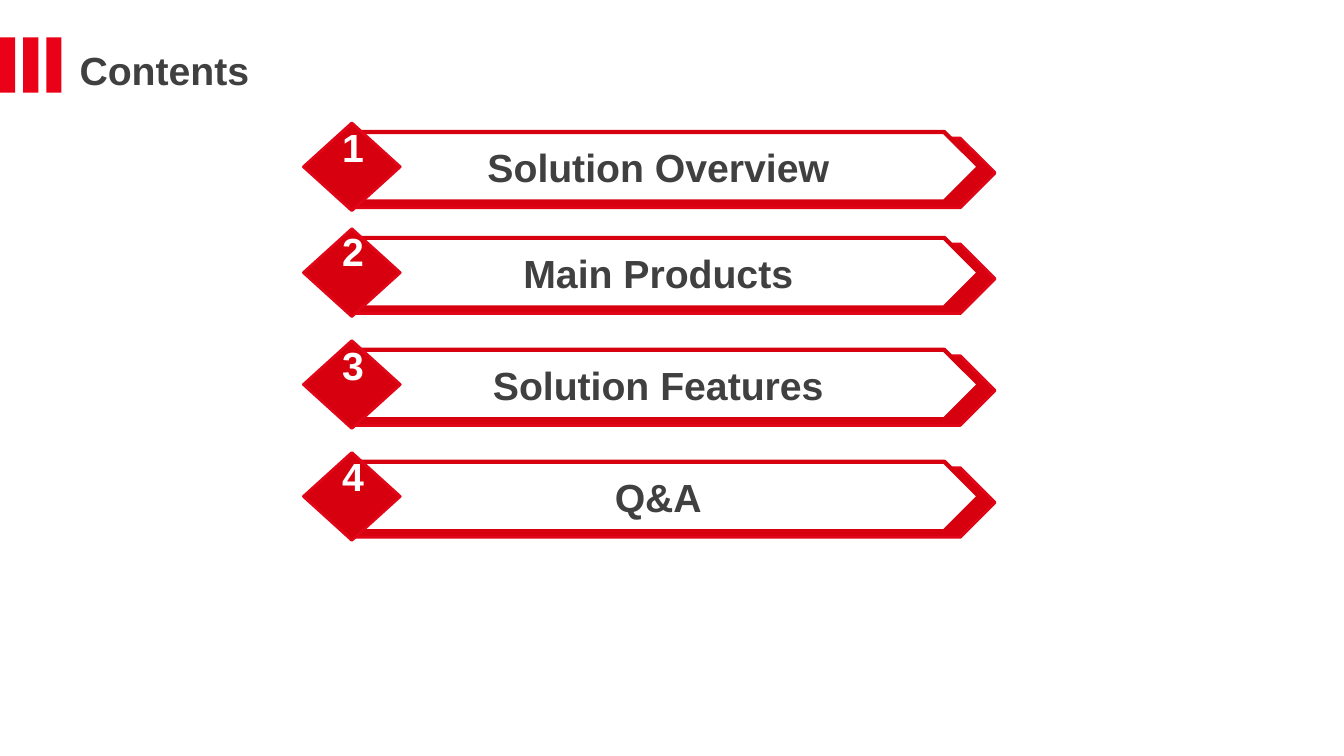
from pptx import Presentation
from pptx.dml.color import RGBColor
from pptx.enum.shapes import MSO_SHAPE as SHAPE
from pptx.enum.text import MSO_ANCHOR as ANCHOR, PP_ALIGN as ALIGN
from pptx.util import Inches, Pt

BRIGHT_RED = RGBColor(0xEA, 0x00, 0x17)
RED = RGBColor(0xD7, 0x00, 0x0F)
EDGE_RED = RGBColor(0xE0, 0x05, 0x17)
GREY = RGBColor(0x40, 0x40, 0x40)
WHITE = RGBColor(0xFF, 0xFF, 0xFF)

FONT = {"name": "Arial", "size": Pt(28), "bold": True}
NO_MARGINS = {"margin_left": 0, "margin_right": 0, "margin_top": 0, "margin_bottom": 0}

ENTRIES = [
    ("Solution Overview", 1.22, 1.17),
    ("Main Products", 2.27, 2.2),
    ("Solution Features", 3.38, 3.33),
    ("Q&A", 4.49, 4.44),
]


def add_shape(s, kind, box, fill, line=None, width=0):
    sp = s.shapes.add_shape(kind, *map(Inches, box))
    sp.shadow.inherit = False
    sp.fill.solid()
    sp.fill.fore_color.rgb = fill
    if line is None:
        sp.line.fill.background()
    else:
        sp.line.color.rgb = line
        sp.line.width = Pt(width)
    return sp


def write_text(sp, text, color, align, anchor, **frame):
    tf = sp.text_frame
    for key, value in {"word_wrap": True, "vertical_anchor": anchor, **frame}.items():
        setattr(tf, key, value)
    p = tf.paragraphs[0]
    p.alignment = align
    r = p.add_run()
    r.text = text
    for key, value in FONT.items():
        setattr(r.font, key, value)
    r.font.color.rgb = color
    return p


def add_text(s, box, *args, **frame):
    return write_text(s.shapes.add_textbox(*map(Inches, box)), *args, **frame)


def add_heading(s, text):
    for i in range(3):
        add_shape(s, SHAPE.RECTANGLE, (0.23 * i, 0.37, 0.15, 0.55), BRIGHT_RED)
    p = add_text(s, (0.69, 0.32, 6.29, 0.67), text, GREY, ALIGN.LEFT, ANCHOR.TOP)
    p.line_spacing = 1.2


def add_entry(s, number, title, top, number_top):
    add_shape(s, SHAPE.PENTAGON, (3.52, top + 0.15, 6.35, 0.69), RED, EDGE_RED, 2)
    banner = add_shape(s, SHAPE.PENTAGON, (3.52, top + 0.09, 6.19, 0.69), WHITE, RED, 3)
    write_text(banner, title, GREY, ALIGN.CENTER, ANCHOR.MIDDLE)
    add_shape(s, SHAPE.DIAMOND, (3.01, top, 0.96, 0.87), RED, EDGE_RED, 2)
    add_text(s, (3.29, number_top, 0.42, 0.57), str(number), WHITE,
             ALIGN.CENTER, ANCHOR.MIDDLE, **NO_MARGINS)


def main():
    prs = Presentation()
    prs.slide_width, prs.slide_height = Inches(13.33), Inches(7.5)
    s = prs.slides.add_slide(prs.slide_layouts[6])
    add_heading(s, "Contents")
    for number, entry in enumerate(ENTRIES, 1):
        add_entry(s, number, *entry)
    prs.save("out.pptx")


if __name__ == "__main__":
    main()
